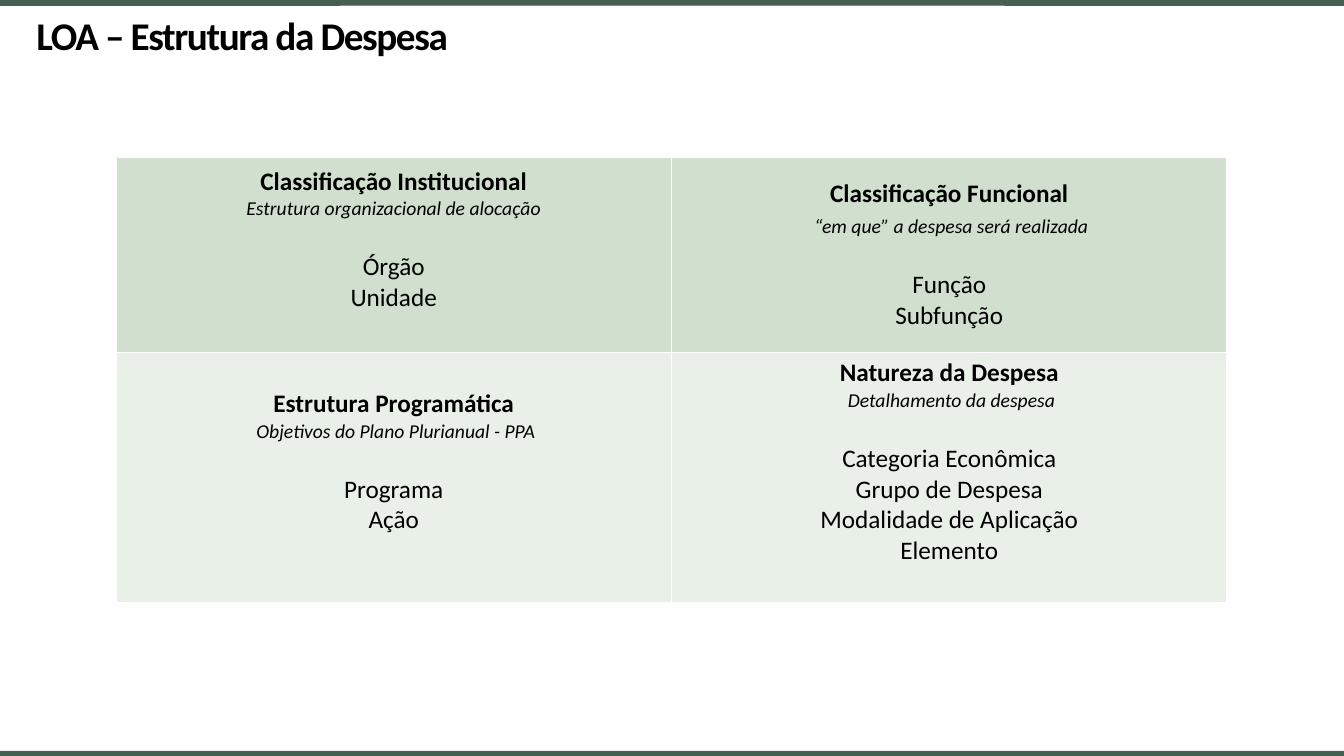
from dataclasses import dataclass

from lxml import etree
from pptx import Presentation
from pptx.dml.color import RGBColor
from pptx.enum.shapes import MSO_SHAPE as Shape
from pptx.enum.text import MSO_ANCHOR as Anchor, PP_ALIGN as Align
from pptx.oxml.ns import qn
from pptx.util import Inches, Pt

FONT = "Calibri"
INK, WHITE, BAR = "000000", "FFFFFF", "455F51"
ROW_FILLS = ["D1DFCE", "E9F0E8"]
WIDTH, HEIGHT = Inches(13.33), Inches(7.5)
BAR_SHARE = 0.05 / 7.5  # of the slide's height
TABLE_LEFT, TABLE_TOP = 1.15, 1.56  # inches
COLUMNS, ROWS = [5.51, 5.51], [1.94, 2.47]  # inches
LINE = 22  # height of one 18 pt line, in points


@dataclass
class Classification:
    heading: str
    note: str
    items: list[str]
    note_gap: float = 0  # points above the note
    lift: float = LINE  # extra bottom margin, in points


GRID = [
    [
        Classification("Classificação Institucional",
                       "Estrutura organizacional de alocação",
                       ["Órgão", "Unidade"]),
        Classification("Classificação Funcional",
                       " “em que” a despesa será realizada",
                       ["Função", "Subfunção"], note_gap=4, lift=0),
    ],
    [
        Classification("Estrutura Programática",
                       " Objetivos do Plano Plurianual - PPA",
                       ["Programa", "Ação"]),
        Classification("Natureza da Despesa", " Detalhamento da despesa",
                       ["Categoria Econômica", "Grupo de Despesa",
                        "Modalidade de Aplicação", "Elemento"]),
    ],
]


def rgb(color: str) -> RGBColor:
    return RGBColor.from_string(color)


def set_font(p, size: float, bold: bool = False, italic: bool = False) -> None:
    f = p.font
    f.name, f.size, f.bold, f.italic = FONT, Pt(size), bold, italic
    f.color.rgb = rgb(INK)


def add_bar(slide, top_share: float) -> None:
    sp = slide.shapes.add_shape(Shape.RECTANGLE, 0, int(HEIGHT * top_share),
                                WIDTH, int(HEIGHT * BAR_SHARE))
    sp.shadow.inherit = False
    sp.fill.solid()
    sp.fill.fore_color.rgb = rgb(BAR)
    sp.line.color.rgb = rgb(BAR)
    sp.line.width = Pt(0.25)


def set_title(slide, text: str) -> None:
    sp = slide.shapes.title
    sp.left, sp.top, sp.width, sp.height = map(Inches, (0.26, 0.1, 12.81, 0.5))
    tf = sp.text_frame
    tf.text = text
    tf.vertical_anchor = Anchor.MIDDLE
    p = tf.paragraphs[0]
    p.alignment = Align.LEFT
    set_font(p, 28, bold=True)
    p.runs[0].font.size = Pt(28)
    # Letter spacing of -1 pt
    p.runs[0]._r.get_or_add_rPr().set("spc", "-100")


def set_borders(cell, color: str, width: float) -> None:
    props = cell._tc.get_or_add_tcPr()
    for i, side in enumerate(("a:lnL", "a:lnR", "a:lnT", "a:lnB")):
        ln = etree.Element(qn(side), w=str(Pt(width)))
        fill = etree.SubElement(ln, qn("a:solidFill"))
        etree.SubElement(fill, qn("a:srgbClr"), val=color)
        props.insert(i, ln)


def fill_cell(cell, entry: Classification, color: str) -> None:
    cell.fill.solid()
    cell.fill.fore_color.rgb = rgb(color)
    set_borders(cell, WHITE, 1)
    cell.vertical_anchor = Anchor.MIDDLE
    cell.margin_bottom = Inches(0.05) + Pt(entry.lift)
    tf = cell.text_frame
    tf.text = "\n".join([entry.heading, entry.note, *entry.items])
    for i, p in enumerate(tf.paragraphs):
        p.alignment = Align.CENTER
        set_font(p, 14 if i == 1 else 18, bold=i == 0, italic=i == 1)
    tf.paragraphs[1].space_before = Pt(entry.note_gap)
    tf.paragraphs[2].space_before = Pt(LINE)


def add_classifications(slide) -> None:
    table = slide.shapes.add_table(
        len(ROWS), len(COLUMNS), Inches(TABLE_LEFT), Inches(TABLE_TOP),
        Inches(sum(COLUMNS)), Inches(sum(ROWS))).table
    table.first_row = table.horz_banding = False
    for column, width in zip(table.columns, COLUMNS):
        column.width = Inches(width)
    for r, (height, color, entries) in enumerate(zip(ROWS, ROW_FILLS, GRID)):
        table.rows[r].height = Inches(height)
        for c, entry in enumerate(entries):
            fill_cell(table.cell(r, c), entry, color)


def main() -> None:
    prs = Presentation()
    prs.slide_width, prs.slide_height = WIDTH, HEIGHT
    slide = prs.slides.add_slide(prs.slide_layouts[5])
    # Bars along the top and bottom edges
    for top_share in (0, 1 - BAR_SHARE):
        add_bar(slide, top_share)
    set_title(slide, "LOA – Estrutura da Despesa")
    add_classifications(slide)
    prs.save("out.pptx")


if __name__ == "__main__":
    main()
